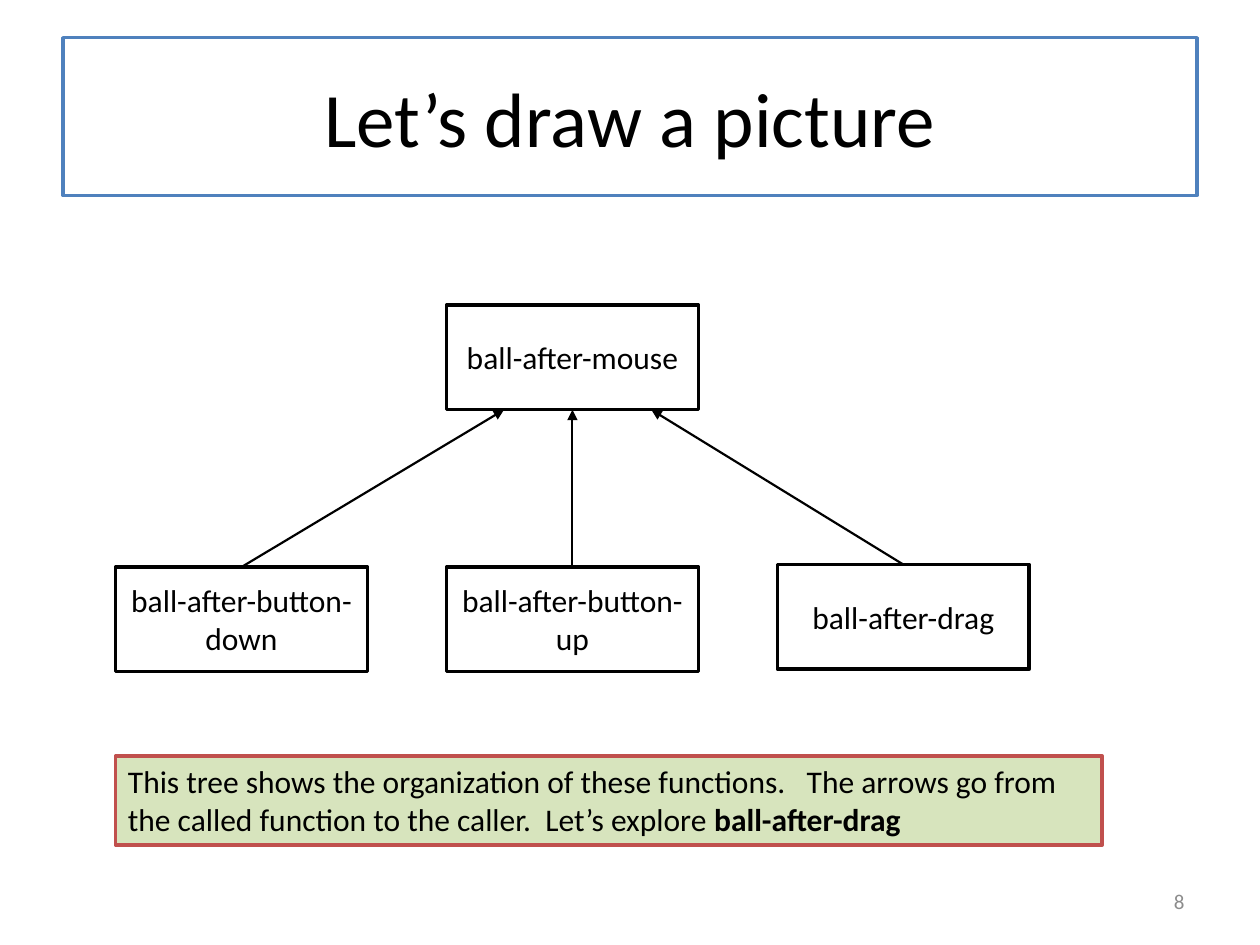
import pptx
import pptx.util
import pptx.dml.color
import pptx.enum.shapes
import pptx.enum.text
import pptx.oxml.ns
import lxml.etree

Cm = pptx.util.Cm
Align = pptx.enum.text.PP_ALIGN
Anchor = pptx.enum.text.MSO_ANCHOR
COLORS = {"ink": "000000", "paper": "FFFFFF", "title_line": "4F81BD",
          "note_fill": "D7E4BD", "note_line": "C0504D", "number": "8C8C8C"}


def color(name):
    return pptx.dml.color.RGBColor.from_string(COLORS[name])


def add_box(page, place, texts, size, align=Align.CENTER, anchor=Anchor.MIDDLE,
            ink="ink", fill="paper", line="ink"):
    """Add a rectangle, or a plain text box when line is None; texts holds (text, bold)."""
    place = [Cm(length) for length in place]
    if line is None:
        box = page.shapes.add_textbox(*place)
    else:
        box = page.shapes.add_shape(pptx.enum.shapes.MSO_SHAPE.RECTANGLE, *place)
        box.shadow.inherit = False
        box.fill.solid()
        box.fill.fore_color.rgb = color(fill)
        box.line.color.rgb = color(line)
        box.line.width = pptx.util.Pt(2)
    frame = box.text_frame
    frame.word_wrap = True
    frame.vertical_anchor = anchor
    para = frame.paragraphs[0]
    para.alignment = align
    for text, bold in texts:
        span = para.add_run()
        span.text = text
        font_format = {"name": "Calibri", "size": pptx.util.Pt(size), "bold": bold}
        for attribute, value in font_format.items():
            setattr(span.font, attribute, value)
        span.font.color.rgb = color(ink)
    return box


deck = pptx.Presentation()
deck.slide_width, deck.slide_height = Cm(25.4), Cm(19.05)
page = deck.slides.add_slide(deck.slide_layouts[6])

# Title and page number
add_box(page, (1.27, 0.76, 22.86, 3.18), [("Let’s draw a picture", False)], 44,
        line="title_line")
add_box(page, (18.21, 17.65, 5.92, 1.02), [("8", False)], 12,
        align=Align.RIGHT, ink="number", line=None)

# Calling function, above the middle column
first_left, column_step = 2.33, 6.67
node_width, node_height = 5.08, 2.11
caller_top = 6.15
caller_bottom = caller_top + node_height
add_box(page, (first_left + column_step, caller_top, node_width, node_height),
        [("ball-after-mouse", False)], 18)

# Called functions: name, top, and where the arrow meets the caller
called = [("ball-after-button-down", 11.43, 10.16),
          ("ball-after-button-up", 11.43, 11.54),
          ("ball-after-drag", 11.38, 13.13)]
for column, (name, top, arrow_end) in enumerate(called):
    left = first_left + column * column_step
    add_box(page, (left, top, node_width, node_height), [(name, False)], 18)
    arrow = page.shapes.add_connector(
        pptx.enum.shapes.MSO_CONNECTOR.STRAIGHT,
        Cm(left + node_width / 2), Cm(top), Cm(arrow_end), Cm(caller_bottom))
    arrow.line.color.rgb = color("ink")
    arrow.line.width = pptx.util.Pt(1.25)
    lxml.etree.SubElement(arrow.line._get_or_add_ln(),
                          pptx.oxml.ns.qn("a:tailEnd"), type="triangle")
    lxml.etree.SubElement(arrow._element.spPr, pptx.oxml.ns.qn("a:effectLst"))

# Explanation below the tree
note = add_box(page, (first_left, 15.24, 19.89, 1.8),
               [("This tree shows the organization of these functions.   The arrows go "
                 "from the called function to the caller.  Let’s explore ", False),
                ("ball-after-drag", True)],
               18, align=Align.LEFT, anchor=Anchor.TOP,
               fill="note_fill", line="note_line")
note.text_frame.auto_size = pptx.enum.text.MSO_AUTO_SIZE.SHAPE_TO_FIT_TEXT

deck.save("out.pptx")
